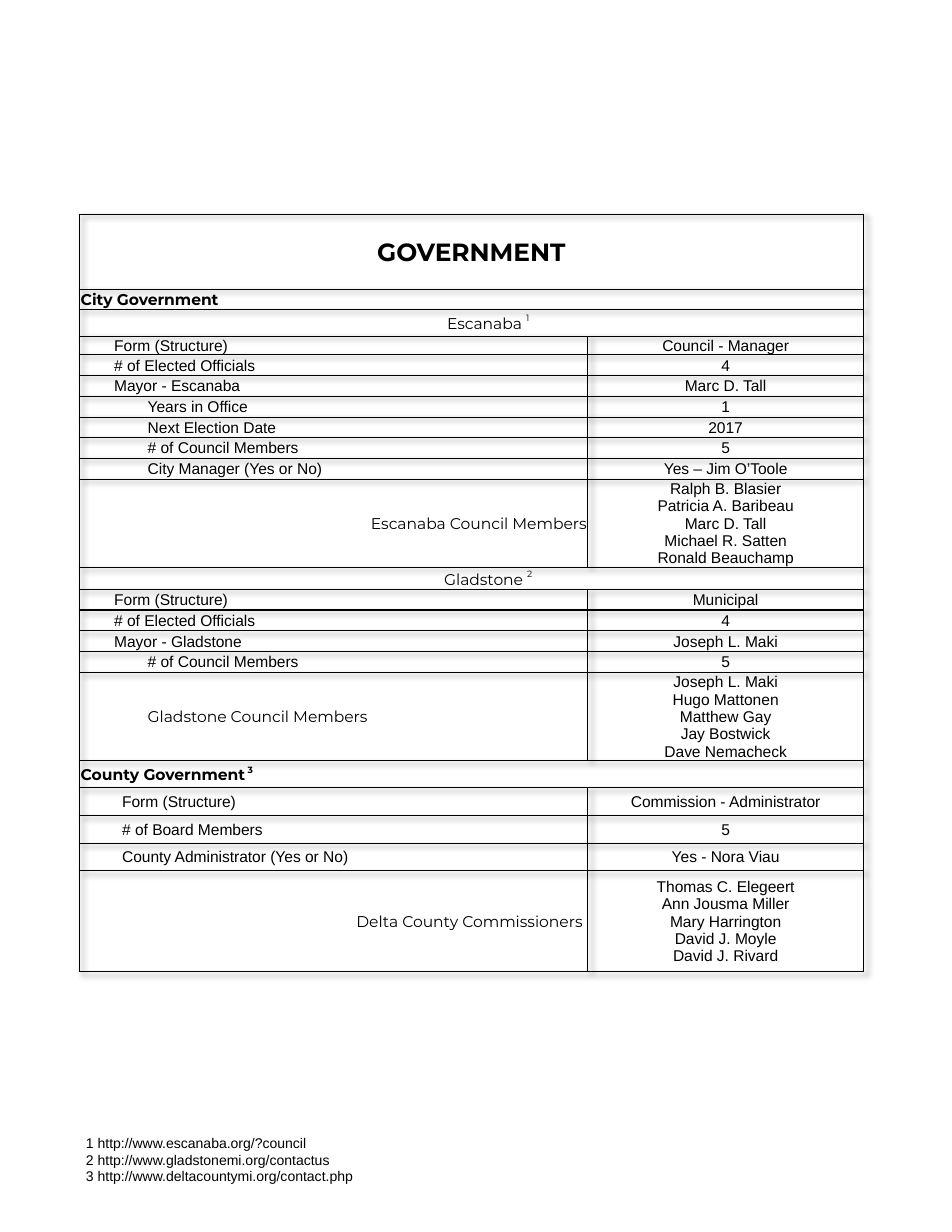
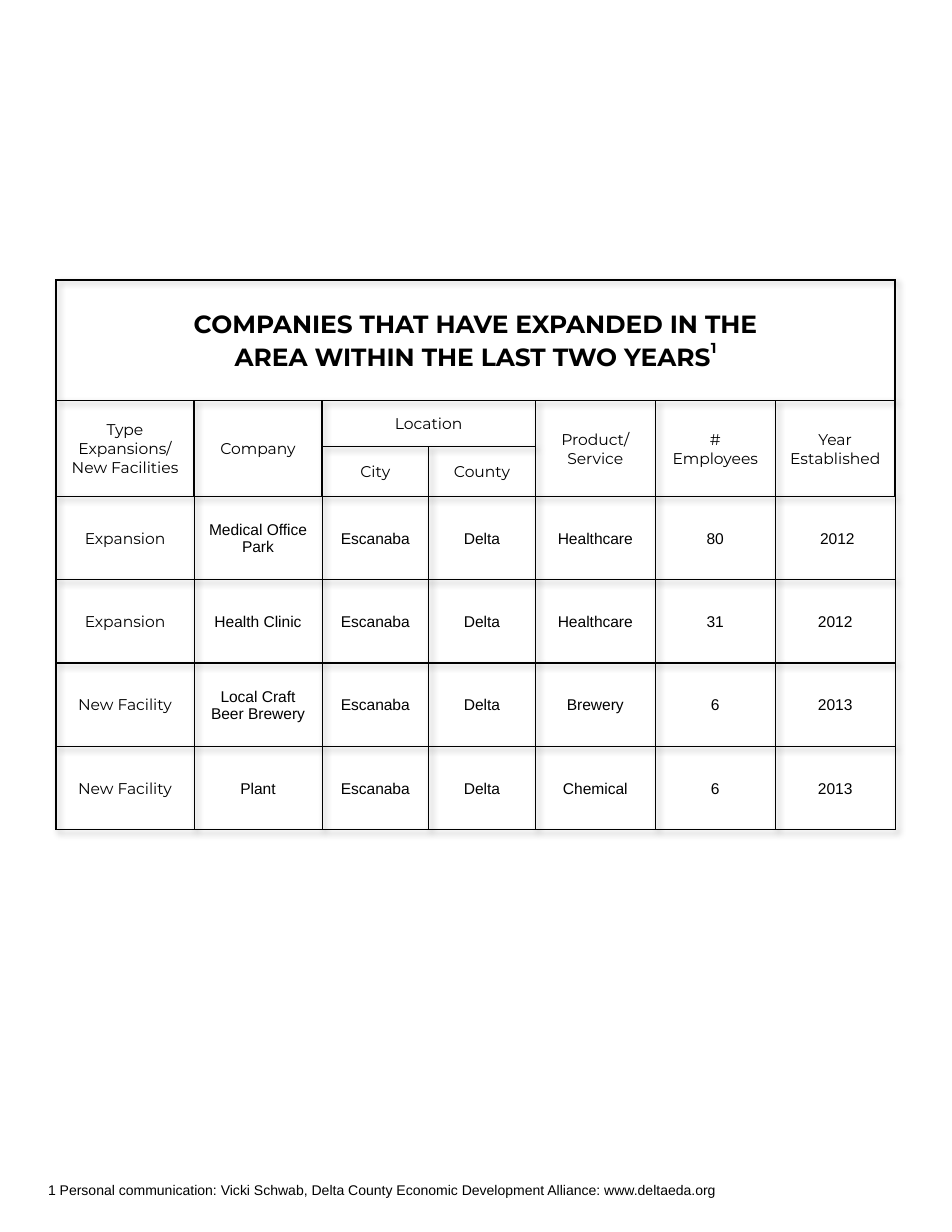
from dataclasses import dataclass

from lxml import etree
from pptx import Presentation
from pptx.dml.color import RGBColor
from pptx.enum.text import MSO_ANCHOR, PP_ALIGN
from pptx.oxml.ns import qn
from pptx.util import Cm, Pt

LEFT, CENTER, RIGHT = PP_ALIGN.LEFT, PP_ALIGN.CENTER, PP_ALIGN.RIGHT
MIDDLE = MSO_ANCHOR.MIDDLE

HEADING_FONT, BODY_FONT = "Montserrat", "Arial"
TITLE_SIZE, CELL_SIZE, FOOTNOTE_SIZE = 16, 10, 9
INK = "000000"
THIN, THICK = 0.5, 1
EDGE, CITY_INDENT, MAYOR_INDENT, COUNTY_INDENT = 0.03, 0.79, 1.55, 0.97
LINE_HEIGHT, COUNTY_HEIGHT, MEMBERS_HEIGHT = 0.47, 0.63, 2
PLAIN_TABLE_STYLE = "{2D5ABB26-0587-4C30-8999-92F81FD0307C}"


@dataclass
class Row:
    """A line of the government table; rule is the weight of the line below it."""
    height: float
    label: str
    value: str = ""
    indent: float = EDGE
    align: PP_ALIGN = LEFT
    font: str = BODY_FONT
    size: int = CELL_SIZE
    bold: bool = False
    note: str = ""
    rule: float = THIN


def city_row(label, value, indent=CITY_INDENT, rule=THIN, height=LINE_HEIGHT):
    return Row(height, label, value, indent, rule=rule)


def county_row(label, value):
    return Row(COUNTY_HEIGHT, label, value, COUNTY_INDENT)


def city_heading(height, name, note, rule=THIN):
    return Row(height, name, indent=CITY_INDENT, align=CENTER,
               font=HEADING_FONT, note=note, rule=rule)


def members_row(height, label, names, indent, align, rule=THIN):
    return Row(height, label, "\n".join(names), indent, align, HEADING_FONT, rule=rule)


GOVERNMENT_ROWS = [
    Row(1.7, "GOVERNMENT", align=CENTER, font=HEADING_FONT, size=TITLE_SIZE,
        bold=True, rule=THICK),
    Row(0.46, "City Government", font=HEADING_FONT, bold=True),
    city_heading(0.6, "Escanaba ", "1"),
    city_row("Form (Structure)", "Council - Manager", height=0.41),
    city_row("# of Elected Officials", "4"),
    city_row("Mayor - Escanaba", "Marc D. Tall"),
    city_row("Years in Office", "1", MAYOR_INDENT),
    city_row("Next Election Date", "2017", MAYOR_INDENT),
    city_row("# of Council Members", "5", MAYOR_INDENT),
    city_row("City Manager (Yes or No)", "Yes – Jim O’Toole", MAYOR_INDENT),
    members_row(MEMBERS_HEIGHT, "Escanaba Council Members",
                ["Ralph B. Blasier", "Patricia A. Baribeau", "Marc D. Tall",
                 "Michael R. Satten", "Ronald Beauchamp"], MAYOR_INDENT, RIGHT),
    city_heading(0.5, "Gladstone ", "2", THICK),
    city_row("Form (Structure)", "Municipal", rule=THICK),
    city_row("# of Elected Officials", "4", rule=THICK),
    city_row("Mayor - Gladstone", "Joseph L. Maki", rule=THICK),
    city_row("# of Council Members", "5", MAYOR_INDENT, THICK),
    members_row(MEMBERS_HEIGHT, "Gladstone Council Members",
                ["Joseph L. Maki", "Hugo Mattonen", "Matthew Gay",
                 "Jay Bostwick", "Dave Nemacheck"], MAYOR_INDENT, LEFT, THICK),
    Row(0.61, "County Government", font=HEADING_FONT, bold=True, note=" 3"),
    county_row("Form (Structure)", "Commission - Administrator"),
    county_row("# of Board Members", "5"),
    county_row("County Administrator (Yes or No)", "Yes - Nora Viau"),
    members_row(2.29, "Delta County Commissioners ",
                ["Thomas C. Elegeert", "Ann Jousma Miller", "Mary Harrington",
                 "David J. Moyle", "David J. Rivard"], COUNTY_INDENT, RIGHT),
]

COMPANY_TITLE = "COMPANIES THAT HAVE EXPANDED IN THE\nAREA WITHIN THE LAST TWO YEARS"
COMPANY_HEADINGS = {
    0: "Type\nExpansions/\nNew Facilities",
    1: "Company",
    4: "Product/ Service",
    5: "#\nEmployees",
    6: "Year Established",
}
COMPANIES = [
    ("Expansion", "Medical Office Park", "Escanaba", "Delta", "Healthcare", "80", " 2012"),
    ("Expansion", "Health Clinic", "Escanaba", "Delta", "Healthcare", "31", "2012"),
    ("New Facility", "Local Craft\nBeer Brewery", "Escanaba", "Delta", "Brewery", "6", "2013"),
    ("New Facility", "Plant", "Escanaba", "Delta", "Chemical", "6", "2013"),
]


def color(hex_string):
    return RGBColor.from_string(hex_string)


def format_text(text_frame, font, size, bold=False, align=LEFT):
    for paragraph in text_frame.paragraphs:
        paragraph.alignment = align
        for run in paragraph.runs:
            run.font.name = font
            run.font.size = Pt(size)
            run.font.bold = bold
            run.font.color.rgb = color(INK)


def write_cell(cell, text, font=BODY_FONT, size=CELL_SIZE, bold=False,
               align=CENTER, indent=EDGE, note=""):
    """Fill a cell; note is a raised footnote mark after the text."""
    cell.margin_left, cell.margin_right = Cm(indent), Cm(EDGE)
    cell.margin_top, cell.margin_bottom = Cm(EDGE), 0
    cell.vertical_anchor = MIDDLE
    cell.text_frame.text = text
    if note:
        run = cell.text_frame.paragraphs[-1].add_run()
        run.text = note
        run.font._element.set("baseline", "50000")
    format_text(cell.text_frame, font, size, bold, align)


def set_borders(cell, left, top, right, bottom):
    properties = cell._tc.get_or_add_tcPr()
    sides = zip(("a:lnL", "a:lnR", "a:lnT", "a:lnB"), (left, right, top, bottom))
    for position, (tag, weight) in enumerate(sides):
        line = etree.Element(qn(tag), w=str(Pt(weight)))
        fill = etree.SubElement(line, qn("a:solidFill"))
        etree.SubElement(fill, qn("a:srgbClr"), val=INK)
        properties.insert(position, line)


def add_shadow(table):
    effects = etree.Element(qn("a:effectLst"))
    shadow = etree.SubElement(effects, qn("a:outerShdw"), blurRad="50800",
                              dist="38100", dir="2700000", algn="tl", rotWithShape="0")
    shade = etree.SubElement(shadow, qn("a:srgbClr"), val=INK)
    etree.SubElement(shade, qn("a:alpha"), val="40000")
    table._tbl.tblPr.insert(0, effects)


def add_plain_table(slide, left, top, widths, heights):
    """Add an unfilled table with a soft shadow; all lengths in centimetres."""
    table = slide.shapes.add_table(len(heights), len(widths), Cm(left), Cm(top),
                                   Cm(sum(widths)), Cm(sum(heights))).table
    table.first_row = table.horz_banding = False
    table._tbl.tblPr.find(qn("a:tableStyleId")).text = PLAIN_TABLE_STYLE
    add_shadow(table)
    for column, width in zip(table.columns, widths):
        column.width = Cm(width)
    for row, height in zip(table.rows, heights):
        row.height = Cm(height)
    for cell in table.iter_cells():
        cell.fill.background()
    return table


def add_footnotes(slide, left, top, width, height, lines):
    box = slide.shapes.add_textbox(Cm(left), Cm(top), Cm(width), Cm(height))
    box.text_frame.word_wrap = True
    box.text_frame.text = "\n".join(lines)
    format_text(box.text_frame, BODY_FONT, FOOTNOTE_SIZE)


def add_government_table(slide, left, top):
    table = add_plain_table(slide, left, top, [11.53, 6.25],
                            [row.height for row in GOVERNMENT_ROWS])
    rule_above = THICK
    for index, row in enumerate(GOVERNMENT_ROWS):
        label_cell, value_cell = table.cell(index, 0), table.cell(index, 1)
        write_cell(label_cell, row.label, row.font, row.size, row.bold,
                   row.align, row.indent, row.note)
        set_borders(label_cell, THICK, rule_above, THIN, row.rule)
        set_borders(value_cell, THIN, rule_above, THIN, row.rule)
        if row.value:
            write_cell(value_cell, row.value)
        else:
            label_cell.merge(value_cell)
        rule_above = row.rule


def add_company_table(slide, left, top):
    widths = [3.13, 2.9] + [2.42] * 2 + [2.72] * 3
    heights = [2.74, 1.04, 1.13] + [1.89] * len(COMPANIES)
    table = add_plain_table(slide, left, top, widths, heights)
    last_column = len(widths) - 1

    table.cell(0, 0).merge(table.cell(0, last_column))
    write_cell(table.cell(0, 0), COMPANY_TITLE, HEADING_FONT, TITLE_SIZE, True, note="1")
    for column, heading in COMPANY_HEADINGS.items():
        table.cell(1, column).merge(table.cell(2, column))
        write_cell(table.cell(1, column), heading, HEADING_FONT)
    table.cell(1, 2).merge(table.cell(1, 3))
    for row, column, heading in ((1, 2, "Location"), (2, 2, "City"), (2, 3, "County")):
        write_cell(table.cell(row, column), heading, HEADING_FONT)

    for row, company in enumerate(COMPANIES, start=3):
        for column, text in enumerate(company):
            write_cell(table.cell(row, column), text,
                       BODY_FONT if column else HEADING_FONT)

    for row in range(len(heights)):
        for column in range(len(widths)):
            side = THICK if row < 3 else THIN
            in_location = column in (2, 3)
            set_borders(table.cell(row, column),
                        THICK if column == 0 else THIN if (row, column) == (2, 3) else side,
                        THIN if row == 2 and in_location else THICK,
                        THIN if (row, column) == (2, 2) else side,
                        THIN if row == 1 and in_location else THICK)


def build_government_slide(slide):
    add_government_table(slide, 1.8, 4.86)
    add_footnotes(slide, 1.7, 25.6, 12, 1.8, [
        "1 http://www.escanaba.org/?council",
        "2 http://www.gladstonemi.org/contactus",
        "3 http://www.deltacountymi.org/contact.php",
    ])


def build_company_slide(slide):
    add_company_table(slide, 1.27, 6.35)
    add_footnotes(slide, 0.84, 26.67, 20.3, 0.64, [
        "1 Personal communication: Vicki Schwab, Delta County Economic "
        "Development Alliance: www.deltaeda.org",
    ])


def main():
    presentation = Presentation()
    presentation.slide_width, presentation.slide_height = Cm(21.59), Cm(27.94)
    blank_layout = presentation.slide_layouts[6]
    for build_slide in (build_government_slide, build_company_slide):
        build_slide(presentation.slides.add_slide(blank_layout))
    presentation.save("out.pptx")


if __name__ == "__main__":
    main()
